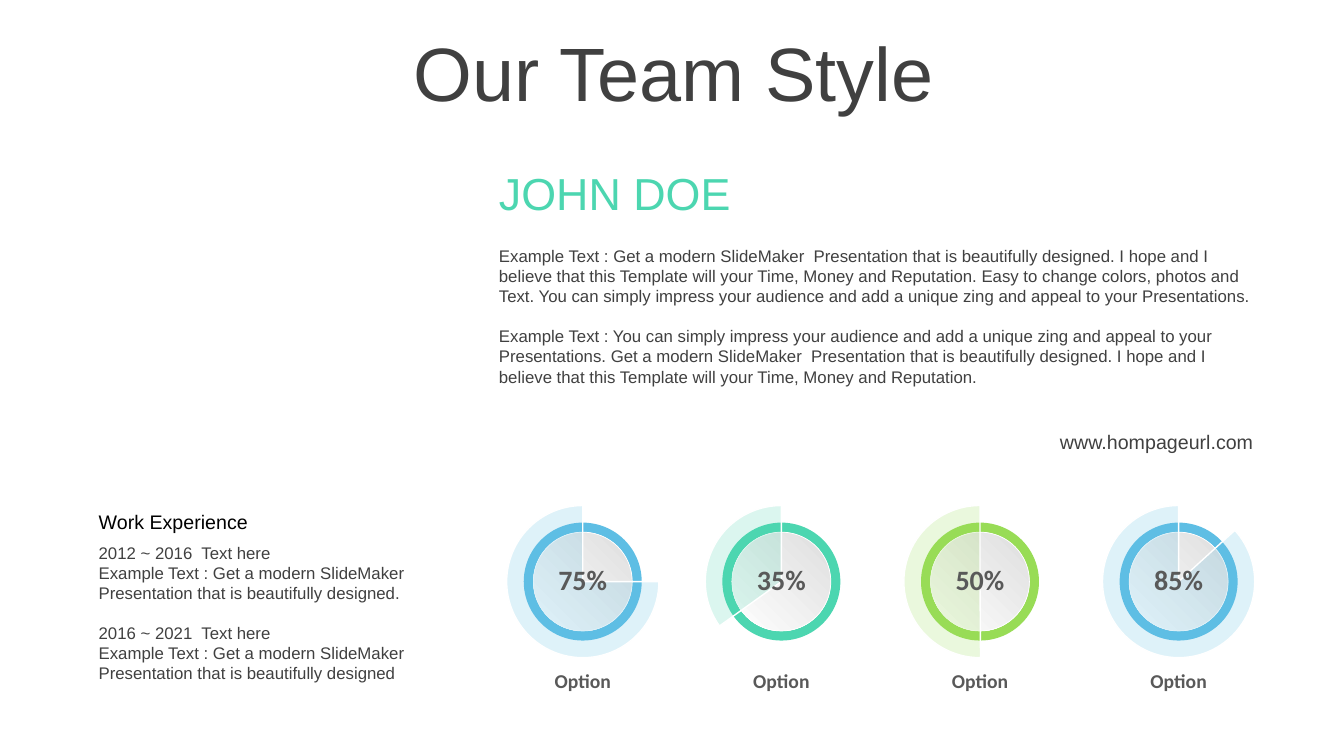
from lxml import etree
from pptx import Presentation
from pptx.dml.color import RGBColor
from pptx.enum.shapes import MSO_SHAPE
from pptx.enum.text import MSO_ANCHOR, MSO_AUTO_SIZE, PP_ALIGN
from pptx.oxml.ns import qn
from pptx.util import Inches, Pt

OVAL, PIE = MSO_SHAPE.OVAL, MSO_SHAPE.PIE
LEFT, CENTER, RIGHT = PP_ALIGN.LEFT, PP_ALIGN.CENTER, PP_ALIGN.RIGHT
TOP, MIDDLE = MSO_ANCHOR.TOP, MSO_ANCHOR.MIDDLE
NO_AUTOFIT = MSO_AUTO_SIZE.NONE

COLORS = {
    "text": "404040", "heading": "000000", "label": "595959",
    "blue": "5EBEE4", "teal": "4CD6B0", "green": "98DC56",
    "shade": "DEDEDE", "white": "FFFFFF",
}
TITLE_ONLY = 5
PIE_UNITS_PER_DEGREE = 0.6
RING, FACE, SECTOR = 1.17, 0.98, 1.51  # dial diameters
DIAL_STEP = 1.97
# percentage, colour, angle where the sector starts (it ends at the top)
DIALS = [
    ("75%", "blue", 0),
    ("35%", "teal", 144.35),
    ("50%", "green", 89.6),
    ("85%", "blue", 317.65),
]
BIOGRAPHY = [
    "Example Text : Get a modern SlideMaker  Presentation that is beautifully "
    "designed. I hope and I believe that this Template will your Time, Money and "
    "Reputation. Easy to change colors, photos and Text. You can simply impress your "
    "audience and add a unique zing and appeal to your Presentations.",
    "Example Text : You can simply impress your audience and add a unique zing and "
    "appeal to your Presentations. Get a modern SlideMaker  Presentation that is "
    "beautifully designed. I hope and I believe that this Template will your Time, "
    "Money and Reputation.",
]
JOB = "Example Text : Get a modern SlideMaker  Presentation that is beautifully designed"
JOBS = [("2012 ~ 2016  Text here", JOB + "."), ("2016 ~ 2021  Text here", JOB)]


def rgb(name):
    return RGBColor.from_string(COLORS[name])


def write(frame, paragraphs, size=12, color="text", font="Arial", bold=False,
          align=LEFT, anchor=TOP, gap=0, gap_every=1):
    """Fill a text frame, with a gap in points before every gap_every-th paragraph."""
    frame.word_wrap = True
    frame.auto_size = NO_AUTOFIT
    frame.vertical_anchor = anchor
    for index, text in enumerate(paragraphs):
        paragraph = frame.add_paragraph() if index else frame.paragraphs[0]
        paragraph.alignment = align
        if index and index % gap_every == 0:
            paragraph.space_before = Pt(gap)
        run = paragraph.add_run()
        run.text = text
        run.font.size = Pt(size)
        run.font.name = font
        run.font.bold = bold
        run.font.color.rgb = rgb(color)


def add_text(slide, box, *paragraphs, **style):
    textbox = slide.shapes.add_textbox(*map(Inches, box))
    write(textbox.text_frame, paragraphs, **style)


def add_disc(slide, kind, center_x, center_y, diameter, line_width=0):
    disc = slide.shapes.add_shape(
        kind, Inches(center_x - diameter / 2), Inches(center_y - diameter / 2),
        Inches(diameter), Inches(diameter))
    disc.shadow.inherit = False
    if line_width:
        disc.line.color.rgb = rgb("white")
        disc.line.width = Pt(line_width)
    else:
        disc.line.fill.background()
    return disc


def set_opacity(shape, percent):
    color = shape.fill._xPr.find(qn("a:solidFill"))[0]
    etree.SubElement(color, qn("a:alpha")).set("val", str(percent * 1000))


def add_title(slide, box):
    title = slide.shapes.title
    title.left, title.top, title.width, title.height = map(Inches, box)
    write(title.text_frame, ["Our Team Style"], size=54, align=CENTER, anchor=MIDDLE)
    title.text_frame.paragraphs[0].line_spacing = 0.9
    title.text_frame.paragraphs[0].space_before = Pt(10)


def add_profile(slide, left, top, width):
    add_text(slide, (left, top, width, 0.64), "JOHN DOE", size=32, color="teal")
    add_text(slide, (left, top + 0.8, width, 1.51), *BIOGRAPHY, gap=14)
    add_text(slide, (left + width - 2.33, top + 2.62, 2.33, 0.34),
             "www.hompageurl.com", size=14, align=RIGHT, anchor=MIDDLE)


def add_experience(slide, left, top, width):
    add_text(slide, (left, top, width, 0.34), "Work Experience", size=14,
             color="heading")
    lines = [line for job in JOBS for line in job]
    add_text(slide, (left, top + 0.32, width, 1.51), *lines, gap=14, gap_every=2)


def add_dial(slide, center_x, center_y, percentage, color, start):
    ring = add_disc(slide, OVAL, center_x, center_y, RING)
    ring.fill.solid()
    ring.fill.fore_color.rgb = rgb(color)

    face = add_disc(slide, OVAL, center_x, center_y, FACE, line_width=0.5)
    face.fill.gradient()
    face.fill.gradient_angle = 225
    for stop, shade in zip(face.fill.gradient_stops, ("shade", "white")):
        stop.color.rgb = rgb(shade)

    sector = add_disc(slide, PIE, center_x, center_y, SECTOR, line_width=1)
    sector.adjustments[0] = start * PIE_UNITS_PER_DEGREE
    sector.adjustments[1] = 270 * PIE_UNITS_PER_DEGREE
    sector.fill.solid()
    sector.fill.fore_color.rgb = rgb(color)
    set_opacity(sector, 20)

    label_style = dict(color="label", font="Calibri", bold=True, align=CENTER)
    add_text(slide, (center_x - RING / 2, center_y - 0.24, RING, 0.44),
             percentage, size=20, **label_style)
    add_text(slide, (center_x - 0.67, center_y + 0.82, 1.34, 0.34),
             "Option", size=14, **label_style)


def add_dials(slide, first_x, center_y):
    for index, dial in enumerate(DIALS):
        add_dial(slide, first_x + index * DIAL_STEP, center_y, *dial)


def main():
    presentation = Presentation()
    presentation.slide_width = Inches(13.33)
    presentation.slide_height = Inches(7.5)
    slide = presentation.slides.add_slide(presentation.slide_layouts[TITLE_ONLY])
    add_title(slide, (0.35, 0.37, 12.66, 0.79))
    add_dials(slide, 5.78, 5.77)
    add_experience(slide, 0.88, 5.01, 3.48)
    add_profile(slide, 4.85, 1.59, 7.68)
    presentation.save("out.pptx")


if __name__ == "__main__":
    main()
